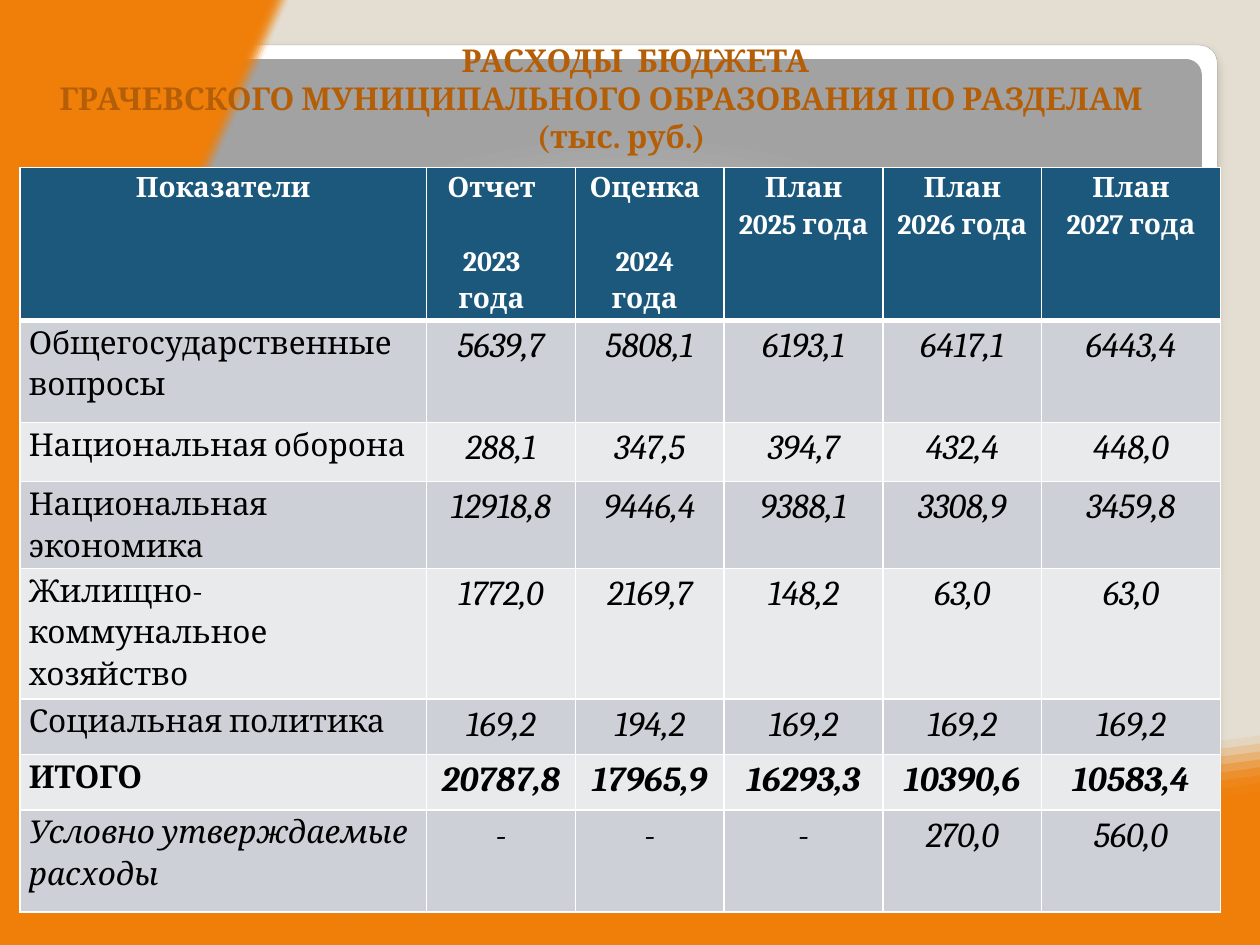
from pptx import Presentation
from pptx.dml.color import RGBColor
from pptx.enum.shapes import MSO_SHAPE
from pptx.enum.text import MSO_ANCHOR, PP_ALIGN
from pptx.oxml import parse_xml
from pptx.oxml.ns import nsdecls, qn
from pptx.util import Cm, Pt

ROUNDED = MSO_SHAPE.ROUNDED_RECTANGLE
MIDDLE = MSO_ANCHOR.MIDDLE
LEFT, CENTER = PP_ALIGN.LEFT, PP_ALIGN.CENTER

SAND = RGBColor(0xE3, 0xDE, 0xD1)
ORANGE = RGBColor(0xF0, 0x7F, 0x09)
BROWN = RGBColor(0xB4, 0x5F, 0x07)
NAVY = RGBColor(0x1B, 0x58, 0x7C)
WHITE = RGBColor(0xFF, 0xFF, 0xFF)
BLACK = RGBColor(0x00, 0x00, 0x00)
FRAME_GRAY = RGBColor(0xA4, 0xA4, 0xA4)
BANDS = (RGBColor(0xCD, 0xD1, 0xD7), RGBColor(0xE8, 0xEA, 0xEC))

FONT = "Cambria"
WIDTH, HEIGHT = 25.4, 19.05
PAGE_CORNERS = [(0, 0), (WIDTH, 0), (WIDTH, HEIGHT), (0, HEIGHT)]

# Wave edges in cm, from top to right: chains of cubic curves sharing end points
INNER_EDGE = [(5.05, 0), (5.05, 0), (4.57, 1.04), (3.73, 2.92), (-3.07, 18.08),
              (2.03, 19.18), (12.47, 18.14), (20.47, 17.32), (25.4, 16.66), (25.4, 16.66)]
NEAR_EDGE = [(5.28, 0), (5.16, 0.28), (4.72, 1.32), (4.01, 2.9), (-2.72, 17.86),
             (2.34, 18.92), (12.65, 17.88), (19.96, 17.15), (24.74, 16.54), (25.4, 16.43)]
FAR_EDGE = [(5.82, 0), (5.82, 0.03), (5.36, 1.02), (4.57, 2.77), (-1.4, 16.05),
            (3.07, 17.22), (13.16, 16.21), (20.68, 15.47), (25.35, 14.83), (25.4, 14.83)]
WAVE_LAYERS = 11

# Text, left margin and right margin in cm of each title line
TITLE = [("РАСХОДЫ  БЮДЖЕТА", 0, 0.2),
         ("ГРАЧЕВСКОГО МУНИЦИПАЛЬНОГО ОБРАЗОВАНИЯ ПО РАЗДЕЛАМ", 0, 1.57),
         ("(тыс. руб.)", 0.8, 0)]

COLUMN_WIDTHS = [8.2, 3, 3, 3.2, 3.2, 3.6]
ROW_HEIGHTS = [2.34, 2.06, 1.19, 1.12, 2.11, 1.12, 1.12, 2.06]
# Label, period, right margin of the label in cm, space above the period in points
HEADERS = [("Показатели", None, 0, 0),
           ("Отчет", "2023 года", 0.38, 21),
           ("Оценка", "2024\vгода", 0.2, 21),
           ("План", "2025 года", 0, 0),
           ("План", "2026 года", 0, 0),
           ("План", "2027 года", 0, 0)]
TOTAL, CONDITIONAL = "ИТОГО", "Условно утверждаемые расходы"
EXPENSES = [
    ("Общегосударственные вопросы", "5639,7", "5808,1", "6193,1", "6417,1", "6443,4"),
    ("Национальная оборона", "288,1", "347,5", "394,7", "432,4", "448,0"),
    ("Национальная экономика", "12918,8", "9446,4", "9388,1", "3308,9", "3459,8"),
    ("Жилищно-коммунальное хозяйство", "1772,0", "2169,7", "148,2", "63,0", "63,0"),
    ("Социальная политика", "169,2", "194,2", "169,2", "169,2", "169,2"),
    (TOTAL, "20787,8", "17965,9", "16293,3", "10390,6", "10583,4"),
    (CONDITIONAL, "-", "-", "-", "270,0", "560,0"),
]


def write(frame, text, *, size, color, bold=False, italic=False, align=CENTER,
          spacing=1.0, before=0, left=0, right=0):
    """Write one paragraph, using the empty first one when there is one."""
    first = frame.paragraphs[0]
    paragraph = frame.add_paragraph() if first.text else first
    paragraph.text = text
    paragraph.alignment = align
    paragraph.line_spacing = spacing
    if before:
        paragraph.space_before = Pt(before)
    properties = paragraph._p.get_or_add_pPr()
    for name, margin in (("marL", left), ("marR", right)):
        if margin:
            properties.set(name, str(Cm(margin)))
    for run in paragraph.runs:
        font = run.font
        font.name, font.size = FONT, Pt(size)
        font.bold, font.italic = bold, italic
        font.color.rgb = color


def add_panel(slide, left, top, width, height, stops, direction):
    """Add a rounded panel with a gradient given as (percent, colour) stops."""
    panel = slide.shapes.add_shape(ROUNDED, Cm(left), Cm(top), Cm(width), Cm(height))
    panel.adjustments[0] = 0.021
    panel.shadow.inherit = False
    panel.line.fill.background()
    panel.fill.background()
    stop_list = "".join(f'<a:gs pos="{percent * 1000}"><a:srgbClr val="{color}"/></a:gs>'
                        for percent, color in stops)
    gradient = parse_xml(f'<a:gradFill {nsdecls("a")} rotWithShape="1">'
                         f'<a:gsLst>{stop_list}</a:gsLst>{direction}</a:gradFill>')
    properties = panel._element.spPr
    properties.replace(properties.find(qn("a:noFill")), gradient)
    return panel


def add_panels(slide):
    frame = add_panel(slide, 0.84, 0.91, 23.7, 17.22,
                      [(0, "FFFFFF"), (98, "FFFFFF"), (99, "F7F7F7"), (100, "DADADA")],
                      '<a:lin ang="5400000" scaled="0"/>')
    frame.line.color.rgb = FRAME_GRAY
    frame.line.width = Pt(0.16)
    frame._element.spPr.find(qn("a:effectLst")).append(parse_xml(
        f'<a:outerShdw {nsdecls("a")} blurRad="{Pt(6)}" dist="{Pt(4)}" dir="5400000">'
        '<a:srgbClr val="000000"><a:alpha val="25000"/></a:srgbClr></a:outerShdw>'))
    add_panel(slide, 1.17, 1.19, 23.06, 15.24,
              [(0, "FFFFFF"), (55, "E1E1E1"), (100, "A2A2A2")],
              '<a:path path="circle">'
              '<a:fillToRect l="50000" t="175000" r="50000" b="-75000"/></a:path>')


def curves(edge):
    """Split a chain of cubic curves into drawing commands."""
    return [("cubicBezTo", edge[start:start + 3]) for start in range(1, len(edge), 3)]


def add_outline(slide, commands, opacity=1.0):
    """Add a page-sized freeform drawn by (command, points in cm) pairs."""
    corners = [(Cm(x), Cm(y)) for x, y in PAGE_CORNERS]
    builder = slide.shapes.build_freeform(*corners[0])
    builder.add_line_segments(corners[1:], close=True)
    outline = builder.convert_to_shape()
    outline.shadow.inherit = False
    outline.line.fill.background()
    outline.fill.solid()
    outline.fill.fore_color.rgb = ORANGE
    properties = outline._element.spPr
    # Curves take the place of the straight sides
    route = properties.find(".//" + qn("a:path"))
    for side in list(route):
        route.remove(side)
    for command, points in commands:
        marks = "".join(f'<a:pt x="{Cm(x)}" y="{Cm(y)}"/>' for x, y in points)
        route.append(parse_xml(f'<a:{command} {nsdecls("a")}>{marks}</a:{command}>'))
    if opacity < 1:
        color = properties.find(qn("a:solidFill")).find(qn("a:srgbClr"))
        color.append(parse_xml(
            f'<a:alpha {nsdecls("a")} val="{round(opacity * 100000)}"/>'))


def add_wave(slide):
    inner = [("moveTo", INNER_EDGE[:1])] + curves(INNER_EDGE)
    corners = [("lnTo", [corner]) for corner in PAGE_CORNERS[:1:-1][::-1] + PAGE_CORNERS[:1]]
    add_outline(slide, inner + corners + [("close", [])])
    # Soft border: overlapping bands that narrow and grow denser
    for layer in range(WAVE_LAYERS):
        share = layer / (WAVE_LAYERS - 1)
        edge = [tuple(f + (n - f) * share for f, n in zip(far, near))
                for far, near in zip(FAR_EDGE, NEAR_EDGE)][::-1]
        border = [("lnTo", edge[:1])] + curves(edge) + [("close", [])]
        add_outline(slide, inner + border, (layer + 1) / WAVE_LAYERS)


def add_title(slide):
    box = slide.shapes.add_textbox(Cm(0.91), Cm(1.04), Cm(24), Cm(3.2))
    frame = box.text_frame
    frame.word_wrap = True
    frame.vertical_anchor = MIDDLE
    frame.margin_left = frame.margin_right = frame.margin_top = 0
    frame.margin_bottom = Cm(1.33)
    for text, left, right in TITLE:
        write(frame, text, size=18, color=BROWN, bold=True, left=left, right=right)


def style_cell(cell, fill, top=1, bottom=1):
    cell.margin_left = cell.margin_right = Cm(0.18)
    cell.margin_top = cell.margin_bottom = 0
    properties = cell._tc.get_or_add_tcPr()
    for side, width in (("L", 1), ("R", 1), ("T", top), ("B", bottom)):
        properties.append(parse_xml(
            f'<a:ln{side} {nsdecls("a")} w="{Pt(width)}"><a:solidFill>'
            f'<a:srgbClr val="{WHITE}"/></a:solidFill></a:ln{side}>'))
    cell.fill.solid()
    cell.fill.fore_color.rgb = fill


def add_expense_table(slide):
    table = slide.shapes.add_table(
        len(ROW_HEIGHTS), len(COLUMN_WIDTHS), Cm(0.4), Cm(3.38),
        Cm(sum(COLUMN_WIDTHS)), Cm(sum(ROW_HEIGHTS))).table
    for column, width in zip(table.columns, COLUMN_WIDTHS):
        column.width = Cm(width)
    for row, height in zip(table.rows, ROW_HEIGHTS):
        row.height = Cm(height)

    # Header row
    heading = {"size": 16, "color": WHITE, "bold": True, "spacing": 1.15}
    for cell, (label, period, right, before) in zip(table.rows[0].cells, HEADERS):
        style_cell(cell, NAVY, bottom=3)
        write(cell.text_frame, label, right=right, **heading)
        if period:
            write(cell.text_frame, period, before=before, **heading)

    # Expense rows
    for index, record in enumerate(EXPENSES):
        name = record[0]
        for column, text in enumerate(record):
            cell = table.cell(index + 1, column)
            style_cell(cell, BANDS[index % 2], top=3 if index == 0 else 1)
            is_name = column == 0
            write(cell.text_frame, text, size=18 if is_name else 20, color=BLACK,
                  bold=name == TOTAL, italic=not is_name or name == CONDITIONAL,
                  align=LEFT if is_name else CENTER, spacing=1.15)


def main():
    presentation = Presentation()
    presentation.slide_width, presentation.slide_height = Cm(WIDTH), Cm(HEIGHT)
    slide = presentation.slides.add_slide(presentation.slide_layouts[6])
    slide.background.fill.solid()
    slide.background.fill.fore_color.rgb = SAND
    add_panels(slide)
    add_wave(slide)
    add_title(slide)
    add_expense_table(slide)
    presentation.save("out.pptx")


if __name__ == "__main__":
    main()
